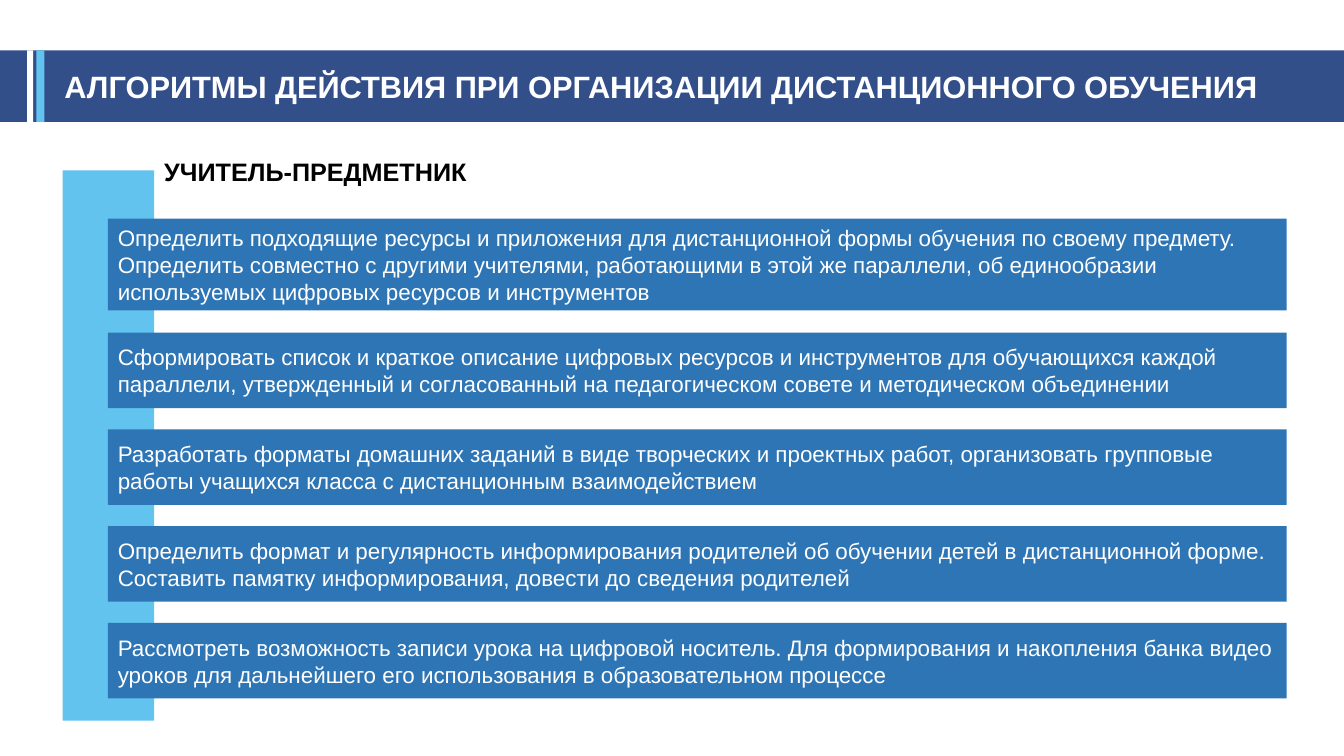
import pptx
import pptx.util
import pptx.dml.color
import pptx.enum.shapes
import pptx.enum.text

Inches = pptx.util.Inches
RGBColor = pptx.dml.color.RGBColor
ALIGN = pptx.enum.text.PP_ALIGN
ANCHOR = pptx.enum.text.MSO_ANCHOR

NAVY = RGBColor(0x33, 0x4F, 0x8A)
SKY = RGBColor(0x62, 0xC3, 0xEF)
BLUE = RGBColor(0x2E, 0x75, 0xB6)
WHITE = RGBColor(0xFF, 0xFF, 0xFF)
BLACK = RGBColor(0x00, 0x00, 0x00)

STEPS = [
    "Определить подходящие ресурсы и приложения для дистанционной формы обучения "
    "по своему предмету. Определить совместно с другими учителями, работающими в этой же "
    "параллели, об единообразии используемых цифровых ресурсов и инструментов",
    "Сформировать список и краткое описание цифровых ресурсов и инструментов для "
    "обучающихся каждой параллели, утвержденный и согласованный на педагогическом совете "
    "и методическом объединении",
    "Разработать форматы домашних заданий в виде творческих и проектных работ, "
    "организовать групповые работы учащихся класса с дистанционным взаимодействием",
    "Определить формат и регулярность информирования родителей об обучении детей в "
    "дистанционной форме. Составить памятку информирования, довести до сведения родителей",
    "Рассмотреть возможность записи урока на цифровой носитель. Для формирования и "
    "накопления банка видео уроков для дальнейшего его использования в образовательном процессе",
]


class SlideBuilder:
    font_name = "Arial"

    def __init__(self, slide):
        self.slide = slide

    def set_text(self, shape, text, size, color, bold=False, align=ALIGN.LEFT,
                 anchor=ANCHOR.TOP, wrap=True):
        frame = shape.text_frame
        frame.text = text
        frame.word_wrap = wrap
        frame.auto_size = pptx.enum.text.MSO_AUTO_SIZE.NONE
        frame.vertical_anchor = anchor
        paragraph = frame.paragraphs[0]
        paragraph.alignment = align
        font = paragraph.runs[0].font
        font.name = self.font_name
        font.size = pptx.util.Pt(size)
        font.bold = bold
        font.color.rgb = color

    def rectangle(self, left, top, width, height, color):
        shape = self.slide.shapes.add_shape(
            pptx.enum.shapes.MSO_SHAPE.RECTANGLE,
            Inches(left), Inches(top), Inches(width), Inches(height))
        shape.shadow.inherit = False
        shape.fill.solid()
        shape.fill.fore_color.rgb = color
        shape.line.fill.background()
        return shape

    def title(self, left, top, width, height, text):
        shape = self.slide.shapes.title
        shape.left, shape.top = Inches(left), Inches(top)
        shape.width, shape.height = Inches(width), Inches(height)
        self.set_text(shape, text, 22, WHITE, bold=True, align=ALIGN.CENTER)
        # Bring the title in front of the band
        shape.element.getparent().append(shape.element)

    def heading(self, left, top, width, height, text):
        shape = self.slide.shapes.add_textbox(
            Inches(left), Inches(top), Inches(width), Inches(height))
        self.set_text(shape, text, 18, BLACK, bold=True, wrap=False)

    def step(self, top, height, text):
        shape = self.rectangle(1.07, top, 11.69, height, BLUE)
        self.set_text(shape, text, 16, WHITE, anchor=ANCHOR.MIDDLE)


def main():
    presentation = pptx.Presentation()
    presentation.slide_width = Inches(13.33)
    presentation.slide_height = Inches(7.5)
    slide = presentation.slides.add_slide(presentation.slide_layouts[5])
    builder = SlideBuilder(slide)

    # Title band with accent stripes
    builder.rectangle(0, 0.5, 13.33, 0.71, NAVY)
    builder.title(-0.22, 0.62, 13.55, 0.47,
                  "АЛГОРИТМЫ ДЕЙСТВИЯ ПРИ ОРГАНИЗАЦИИ ДИСТАНЦИОННОГО ОБУЧЕНИЯ")
    builder.rectangle(0.36, 0.5, 0.08, 0.71, SKY)
    builder.rectangle(0.27, 0.5, 0.06, 0.71, WHITE)

    # Side column and heading
    builder.rectangle(0.62, 1.69, 0.91, 5.46, SKY)
    builder.heading(1.53, 1.5, 3.31, 0.4, "УЧИТЕЛЬ-ПРЕДМЕТНИК")

    # Steps: a taller first box, then an even pitch
    builder.step(2.17, 0.91, STEPS[0])
    for index, text in enumerate(STEPS[1:]):
        builder.step(3.3 + 0.96 * index, 0.75, text)

    presentation.save("out.pptx")


if __name__ == "__main__":
    main()
